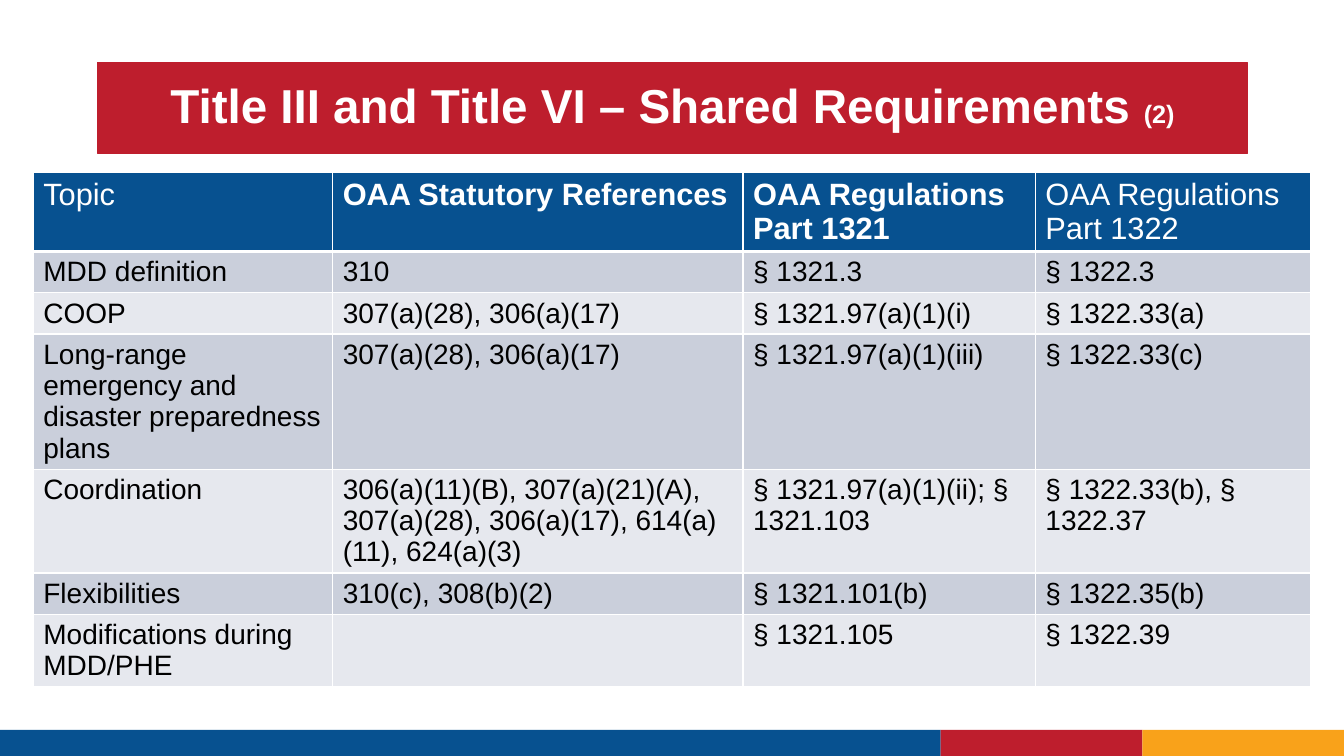
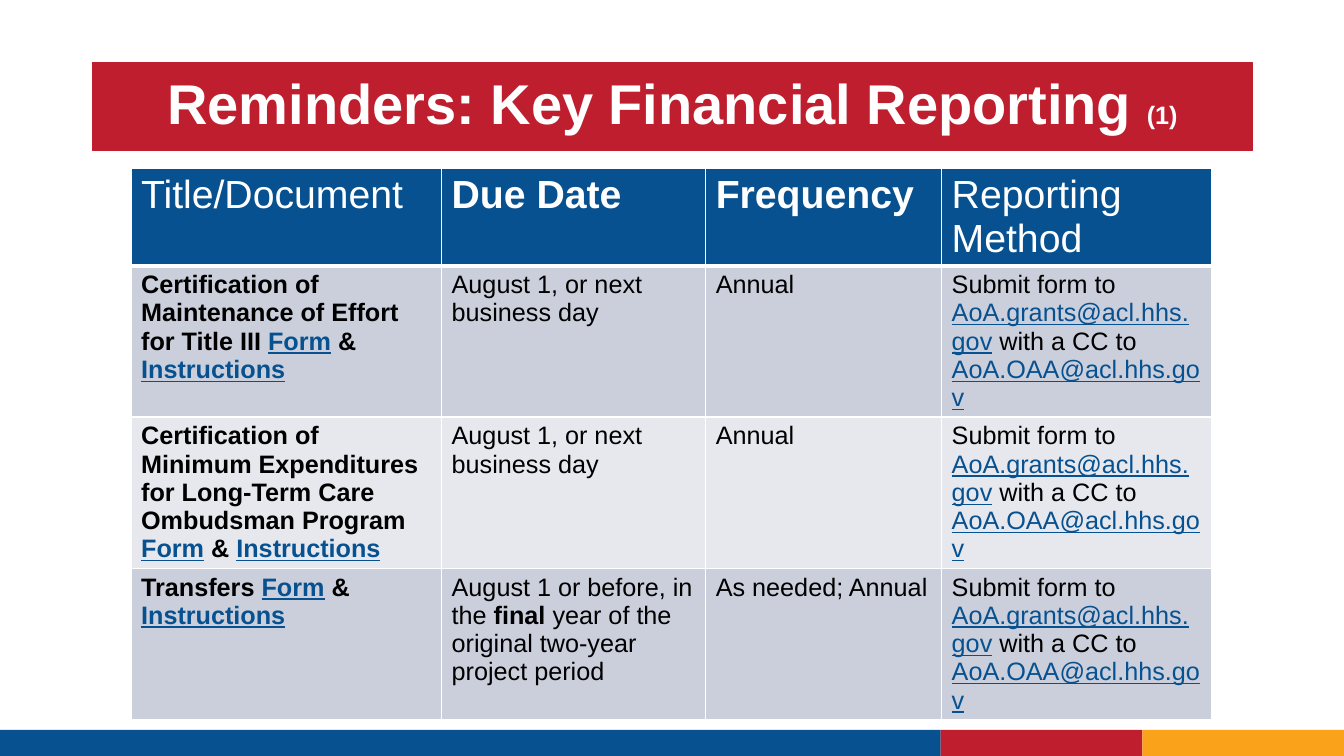
from dataclasses import dataclass

from lxml.etree import SubElement
from pptx import Presentation
from pptx.dml.color import RGBColor
from pptx.enum.shapes import MSO_SHAPE as Shape
from pptx.enum.text import MSO_ANCHOR as Anchor, MSO_AUTO_SIZE as AutoSize, PP_ALIGN as Align
from pptx.oxml.ns import qn
from pptx.util import Inches, Pt


@dataclass(frozen=True)
class Theme:
    font: str = "Arial"
    blue: str = "075190"
    red: str = "BE1E2D"
    gold: str = "F9A21A"
    white: str = "FFFFFF"
    black: str = "000000"
    row_fills: tuple = ("CACFDB", "E6E8EE")
    counter_size: int = 18
    grid_width: int = 1
    header_rule_width: int = 3


THEME = Theme()

# Shared footer bands: left, width, colour
FOOTER_TOP, FOOTER_HEIGHT = 7.24, 0.26
FOOTER_BANDS = [(0, 9.33, THEME.blue), (9.33, 2, THEME.red), (11.33, 2, THEME.gold)]


def link(text):
    return text, {"color": THEME.blue, "underline": True}


# Content of the requirements table
REQUIREMENTS = [
    ["Topic", "OAA Statutory References", "OAA Regulations Part 1321", "OAA Regulations Part 1322"],
    ["MDD definition", "310", "§ 1321.3", "§ 1322.3"],
    ["COOP", "307(a)(28), 306(a)(17)", "§ 1321.97(a)(1)(i)", "§ 1322.33(a)"],
    ["Long-range emergency and disaster preparedness plans", "307(a)(28), 306(a)(17)",
     "§ 1321.97(a)(1)(iii)", "§ 1322.33(c)"],
    ["Coordination",
     "306(a)(11)(B), 307(a)(21)(A), 307(a)(28), 306(a)(17), 614(a)(11), 624(a)(3)",
     "§ 1321.97(a)(1)(ii); § 1321.103", "§ 1322.33(b), § 1322.37"],
    ["Flexibilities", "310(c), 308(b)(2)", "§ 1321.101(b)", "§ 1322.35(b)"],
    ["Modifications during MDD/PHE", "", "§ 1321.105", "§ 1322.39"],
]

# Content of the reporting table; a cell is a string or a list of runs
SUBMISSION = ["Submit form to ", link("AoA.grants@acl.hhs.gov"), " with a CC to ",
              link("AoA.OAA@acl.hhs.gov")]
NEXT_BUSINESS_DAY = "August 1, or next business day"


def document(name):
    bold_runs = [(name + " ", {}), link("Form"), (" & ", {}), link("Instructions")]
    return [(text, {**style, "bold": True}) for text, style in bold_runs]


REPORTING = [
    ["Title/Document", "Due Date", "Frequency", "Reporting Method"],
    [document("Certification of Maintenance of Effort for Title III"),
     NEXT_BUSINESS_DAY, "Annual", SUBMISSION],
    [document("Certification of Minimum Expenditures for Long-Term Care Ombudsman Program"),
     NEXT_BUSINESS_DAY, "Annual", SUBMISSION],
    [document("Transfers"),
     ["August 1 or before, in the ", ("final", {"bold": True}),
      " year of the original two-year project period"],
     "As needed; Annual", SUBMISSION],
]


def rgb(value):
    return RGBColor.from_string(value)


def paint(fill, color):
    fill.solid()
    fill.fore_color.rgb = rgb(color)


def add_text(paragraph, text, *, size, color=THEME.black, bold=False, underline=False):
    run = paragraph.add_run()
    run.text = text
    font = run.font
    font.name, font.size = THEME.font, Pt(size)
    font.bold, font.underline = bold, underline
    font.color.rgb = rgb(color)


def add_footer(slide):
    """Draw the bands and hand them to the layout, so every slide shows them."""
    for left, width, color in FOOTER_BANDS:
        band = slide.shapes.add_shape(Shape.RECTANGLE, Inches(left), Inches(FOOTER_TOP),
                                      Inches(width), Inches(FOOTER_HEIGHT))
        band.shadow.inherit = False
        paint(band.fill, color)
        band.line.fill.background()
        slide.slide_layout.shapes.element.append(band.element)


def add_title(slide, text, counter, *, left, width, height, size):
    title = slide.shapes.title
    title.left, title.top = Inches(left), Inches(0.62)
    title.width, title.height = Inches(width), Inches(height)
    paint(title.fill, THEME.red)
    paint(title.line.fill, THEME.red)
    title.line.width = Pt(0.75)
    frame = title.text_frame
    frame.word_wrap, frame.auto_size = True, AutoSize.NONE
    frame.vertical_anchor = Anchor.MIDDLE
    paragraph = frame.paragraphs[0]
    paragraph.alignment, paragraph.line_spacing = Align.CENTER, 0.9
    add_text(paragraph, text + " ", size=size, color=THEME.white, bold=True)
    add_text(paragraph, counter, size=THEME.counter_size, color=THEME.white, bold=True)


def set_borders(cell, top, bottom):
    properties = cell._tc.get_or_add_tcPr()
    widths = {"L": THEME.grid_width, "R": THEME.grid_width, "T": top, "B": bottom}
    for side, width in widths.items():
        line = SubElement(properties, qn(f"a:ln{side}"), w=str(Pt(width)))
        fill = SubElement(line, qn("a:solidFill"))
        SubElement(fill, qn("a:srgbClr"), val=THEME.white)


def fill_cell(cell, content, **style):
    paragraph = cell.text_frame.paragraphs[0]
    for part in [content] if isinstance(content, str) else content:
        text, extra = (part, {}) if isinstance(part, str) else part
        if text:
            add_text(paragraph, text, **{**style, **extra})


def add_grid(slide, rows, *, left, top, columns, heights, header_size, body_size):
    frame = slide.shapes.add_table(len(rows), len(columns), Inches(left), Inches(top),
                                   Inches(sum(columns)), Inches(sum(heights)))
    table = frame.table
    table.horz_banding = False
    for column, width in zip(table.columns, columns):
        column.width = Inches(width)
    for row, height in zip(table.rows, heights):
        row.height = Inches(height)

    thin, thick = THEME.grid_width, THEME.header_rule_width
    for r, contents in enumerate(rows):
        for c, content in enumerate(contents):
            cell = table.cell(r, c)
            set_borders(cell, thick if r == 1 else thin, thick if r == 0 else thin)
            if r == 0:
                paint(cell.fill, THEME.blue)
                # Only the inner column headings are bold
                fill_cell(cell, content, size=header_size, color=THEME.white,
                          bold=0 < c < len(columns) - 1)
            else:
                paint(cell.fill, THEME.row_fills[(r - 1) % 2])
                fill_cell(cell, content, size=body_size)


def main():
    deck = Presentation()
    deck.slide_width, deck.slide_height = Inches(13.33), Inches(7.5)
    title_only = deck.slide_layouts[5]

    # Shared requirements
    requirements = deck.slides.add_slide(title_only)
    add_footer(requirements)
    add_title(requirements, "Title III and Title VI – Shared Requirements", "(2)",
              left=0.97, width=11.4, height=0.9, size=34)
    add_grid(requirements, REQUIREMENTS, left=0.33, top=1.71,
             columns=[2.97, 4.07, 2.9, 2.73],
             heights=[0.77, 0.41, 0.41, 1.34, 1.03, 0.41, 0.72],
             header_size=22, body_size=20)

    # Financial reporting
    reporting = deck.slides.add_slide(title_only)
    add_title(reporting, "Reminders: Key Financial Reporting", "(1)",
              left=0.92, width=11.5, height=0.87, size=40)
    add_grid(reporting, REPORTING, left=1.3, top=1.67,
             columns=[3.08, 2.62, 2.34, 2.68], heights=[0.96, 1.5, 1.5, 1.5],
             header_size=28, body_size=18)

    deck.save("out.pptx")


if __name__ == "__main__":
    main()
